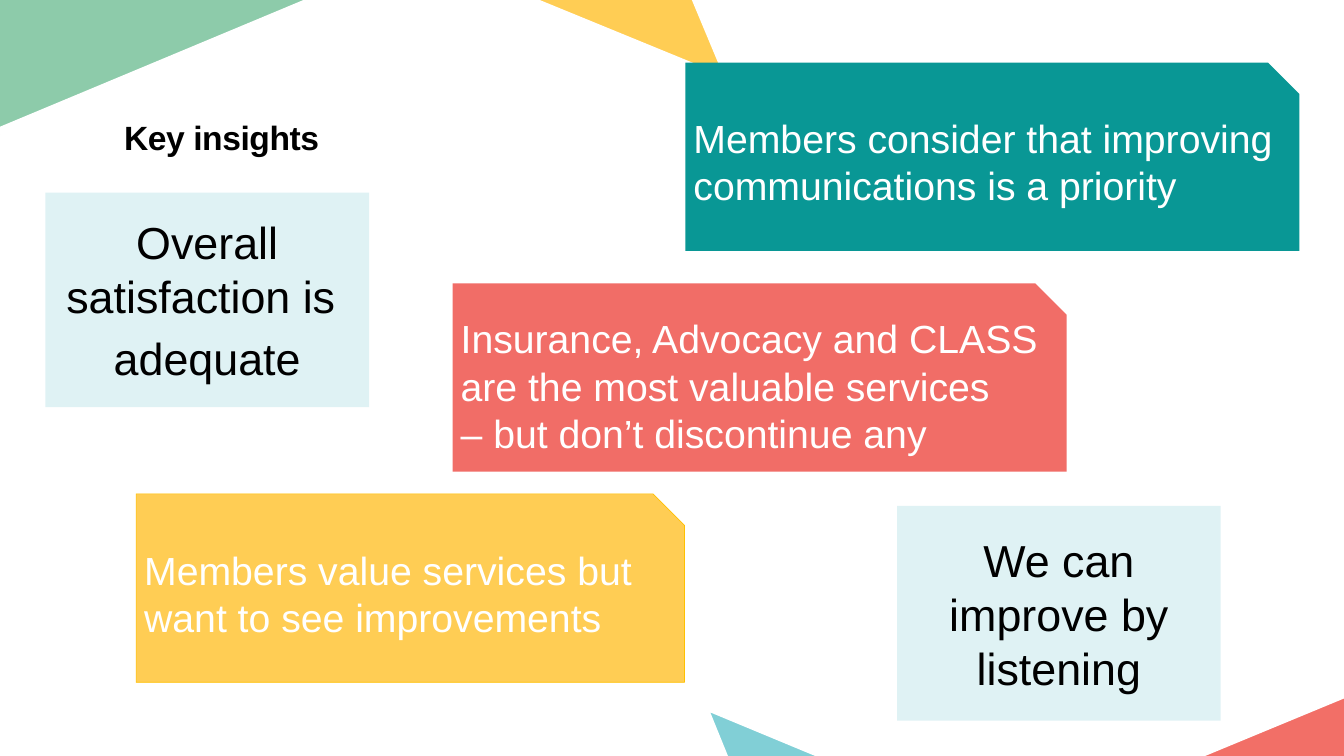
"""Build the key insights slide on a grid of 100 columns by 100 rows."""
from dataclasses import dataclass

from lxml import etree
from pptx import Presentation
from pptx import util as u
from pptx.dml.color import RGBColor
from pptx.enum import shapes, text
from pptx.oxml.ns import qn

WIDTH, HEIGHT = u.Inches(13.33), u.Inches(7.5)
BLACK = RGBColor(0x00, 0x00, 0x00)
WHITE = RGBColor(0xFF, 0xFF, 0xFF)
GREEN = RGBColor(0x8D, 0xCB, 0xAA)
YELLOW = RGBColor(0xFF, 0xCD, 0x54)
GOLD = RGBColor(0xFF, 0xC0, 0x00)
AQUA = RGBColor(0x81, 0xCF, 0xD6)
CORAL = RGBColor(0xF2, 0x6F, 0x67)
RED = RGBColor(0xF1, 0x6D, 0x67)
TEAL = RGBColor(0x09, 0x97, 0x95)
FONT = "Arial"


@dataclass
class Triangle:
    points: list[tuple[float, float]]
    edge_points: int
    fill: RGBColor
    edge_width: float


@dataclass
class Card:
    left: float
    top: float
    width: float
    fill: RGBColor
    lines: list[str]
    bottom_inset: float = 1.6
    outline: RGBColor | None = None


@dataclass
class Takeaway:
    left: float
    top: float
    lines: list[str]


TRIANGLES = [
    Triangle([(24.6, -0.53), (0, 17.73), (0, -0.53)], 2, GREEN, 9.69),
    Triangle([(38.1, -0.53), (54.75, 11.6), (51.9, -0.53)], 3, YELLOW, 9.69),
    Triangle([(63.3, 100.8), (51.75, 92.27), (53.7, 100.8)], 3, AQUA, 11.54),
    Triangle([(100.05, 91.2), (87.38, 100.53), (100.05, 100.53)], 2, CORAL, 11.54),
]
CARDS = [
    Card(10.13, 65.33, 40.8, YELLOW,
         ["Members value services but want to see improvements"], outline=GOLD),
    Card(33.68, 37.47, 45.68, RED,
         ["Insurance, Advocacy and CLASS are the most valuable services",
          "– but don’t discontinue any"], bottom_inset=0.8),
    Card(51, 8.27, 45.68, TEAL,
         ["Members consider that improving communications is a priority"]),
]
TAKEAWAYS = [
    Takeaway(3.38, 25.47, ["Overall satisfaction is ", "adequate"]),
    Takeaway(66.75, 66.93, ["We can improve by listening"]),
]


def column(count: float) -> int:
    return round(WIDTH * count / 100)


def row(count: float) -> int:
    return round(HEIGHT * count / 100)


def area(left: float, top: float, width: float, height: float) -> tuple[int, ...]:
    return column(left), row(top), column(width), row(height)


def write(box, lines: list[str], *, size: float, color: RGBColor,
          insets: tuple[float, float, float, float], bold: bool = False,
          align=text.PP_ALIGN.LEFT, anchor=text.MSO_ANCHOR.MIDDLE,
          gap: float = 0, tracking: float = 0) -> None:
    frame = box.text_frame
    frame.word_wrap = True
    frame.vertical_anchor = anchor
    left, top, right, bottom = insets
    frame.margin_left, frame.margin_right = column(left), column(right)
    frame.margin_top, frame.margin_bottom = row(top), row(bottom)
    for index, line in enumerate(lines):
        para = frame.add_paragraph() if index else frame.paragraphs[0]
        para.alignment = align
        if index:
            para.space_before = u.Pt(gap)
        span = para.add_run()
        span.text = line
        span.font.name, span.font.size = FONT, u.Pt(size)
        span.font.bold = bold
        span.font.color.rgb = color
        if tracking:
            span.font._element.set("spc", str(round(tracking * 100)))


def add_box(page, kind, bounds: tuple[int, ...], fill: RGBColor,
            outline: RGBColor | None = None):
    box = page.shapes.add_shape(kind, *bounds)
    box.shadow.inherit = False
    box.fill.solid()
    box.fill.fore_color.rgb = fill
    if outline is None:
        box.line.fill.background()
    else:
        box.line.color.rgb = outline
        box.line.width = u.Pt(0.5)
    return box


def add_outline(page, points: list[tuple[float, float]], close: bool):
    start, *others = [(column(x), row(y)) for x, y in points]
    builder = page.shapes.build_freeform(*start)
    builder.add_line_segments(others, close=close)
    outline = builder.convert_to_shape()
    outline.shadow.inherit = False
    return outline


def add_triangle(page, triangle: Triangle) -> None:
    body = add_outline(page, triangle.points, True)
    body.fill.solid()
    body.fill.fore_color.rgb = triangle.fill
    body.line.fill.background()
    edge = add_outline(page, triangle.points[:triangle.edge_points], False)
    edge.fill.background()
    edge.line.color.rgb = WHITE
    edge.line.width = u.Pt(triangle.edge_width)


def add_card(page, card: Card) -> None:
    box = add_box(page, shapes.MSO_SHAPE.SNIP_1_RECTANGLE,
                  area(card.left, card.top, card.width, 24.93), card.fill, card.outline)
    write(box, card.lines, size=28, color=WHITE, insets=(0.6, 0.8, 0, card.bottom_inset))


def add_takeaway(page, takeaway: Takeaway) -> None:
    box = add_box(page, shapes.MSO_SHAPE.RECTANGLE,
                  area(takeaway.left, takeaway.top, 24.08, 28.4), AQUA)
    tint = box.fill._xPr.find(qn("a:solidFill"))[0]
    etree.SubElement(tint, qn("a:alpha")).set("val", "25000")
    write(box, takeaway.lines, size=32, color=BLACK, insets=(0.75, 0.67, 0.75, 0.67),
          align=text.PP_ALIGN.CENTER, gap=6)


def main() -> None:
    deck = Presentation()
    deck.slide_width, deck.slide_height = WIDTH, HEIGHT
    page = deck.slides.add_slide(deck.slide_layouts[6])
    for triangle in TRIANGLES:
        add_triangle(page, triangle)
    title = page.shapes.add_textbox(*area(9.15, 15.2, 81.98, 5.47))
    write(title, ["Key insights"], size=24, color=BLACK, bold=True, tracking=-0.3,
          insets=(0.08, 0.27, 0, 0), anchor=text.MSO_ANCHOR.TOP)
    for card in CARDS:
        add_card(page, card)
    for takeaway in TAKEAWAYS:
        add_takeaway(page, takeaway)
    deck.save("out.pptx")


if __name__ == "__main__":
    main()
